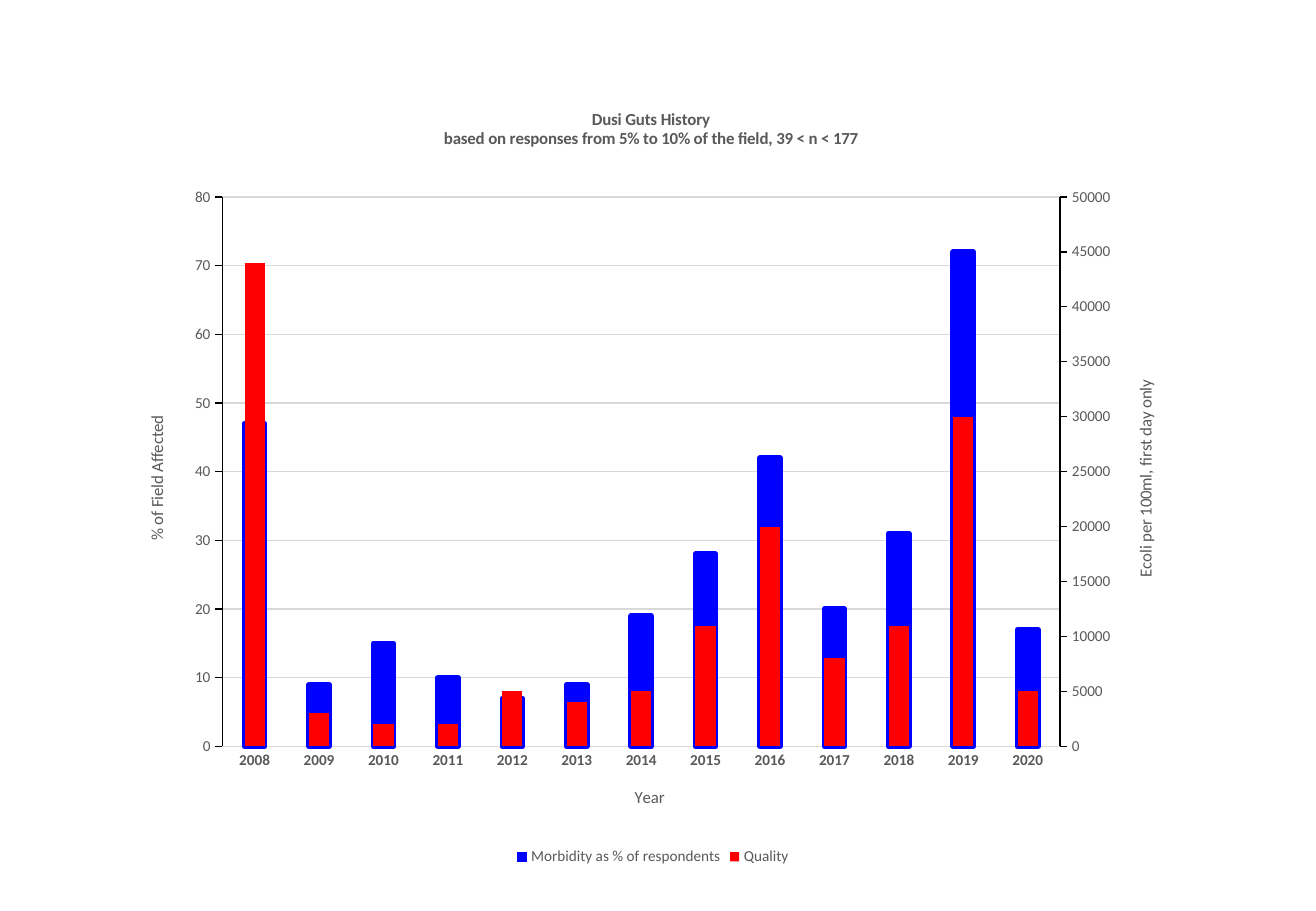
from copy import deepcopy

from lxml.etree import SubElement
from pptx import Presentation
from pptx.chart.axis import ValueAxis
from pptx.chart.data import CategoryChartData
from pptx.dml.color import RGBColor
from pptx.enum.chart import XL_CHART_TYPE as ChartType
from pptx.enum.chart import XL_LEGEND_POSITION as LegendPosition
from pptx.enum.chart import XL_TICK_MARK as TickMark
from pptx.oxml import parse_xml
from pptx.oxml.ns import nsdecls, qn
from pptx.util import Pt

MORBIDITY = [47, 9, 15, 10, 7, 9, 19, 28, 42, 20, 31, 72, 17]
QUALITY = [44000, 3000, 2000, 2000, 5000, 4000, 5000, 11000, 20000, 8000,
           11000, 30000, 5000]


def color(hex_text):
    return RGBColor.from_string(hex_text)


def format_font(font, size=9, fill="595959", bold=False, name="Calibri"):
    font.size, font.bold, font.name = Pt(size), bold, name
    font.color.rgb = color(fill)


def write_text(frame, text, **style):
    for index, line in enumerate(text.split("\n")):
        paragraph = frame.add_paragraph() if index else frame.paragraphs[0]
        run = paragraph.add_run()
        run.text = line
        format_font(run.font, **style)


def place(element, index, inner=False, **fractions):
    for old in element.findall(qn("c:layout")):
        element.remove(old)
    layout = parse_xml(f"<c:layout {nsdecls('c')}><c:manualLayout/></c:layout>")
    settings = {"layoutTarget": "inner"} if inner else {}
    settings.update(xMode="edge", yMode="edge", **fractions)
    for tag, value in settings.items():
        SubElement(layout[0], qn(f"c:{tag}")).set("val", str(value))
    element.insert(index, layout)


class HistorySlide:
    """Build a slide with a two-axis column chart in one style."""

    def __init__(self, width, height):
        self.deck = Presentation()
        self.deck.slide_width, self.deck.slide_height = Pt(width), Pt(height)
        self.slide = self.deck.slides.add_slide(self.deck.slide_layouts[6])

    def column_chart(self, years, series, left, top, width, height):
        data = CategoryChartData()
        data.categories = years
        for name, values in series.items():
            data.add_series(name, values)
        frame = self.slide.shapes.add_chart(
            ChartType.COLUMN_CLUSTERED, Pt(left), Pt(top), Pt(width), Pt(height), data)
        self.chart = frame.chart
        format_font(self.chart.font, size=10)

    def split_axes(self):
        left_axis = self.chart.value_axis
        left_bars = self.chart.plots[0]._element
        right_bars = deepcopy(left_bars)
        left_bars.remove(left_bars.findall(qn("c:ser"))[1])
        right_bars.remove(right_bars.findall(qn("c:ser"))[0])
        left_bars.addnext(right_bars)
        years = deepcopy(self.chart.category_axis._element)
        values = deepcopy(left_axis._element)
        ids = ["50010", "50020"]
        for reference, axis_id in zip(right_bars.findall(qn("c:axId")), ids):
            reference.set("val", axis_id)
        for axis, axis_id, cross_id in zip([years, values], ids, ids[::-1]):
            axis.find(qn("c:axId")).set("val", axis_id)
            axis.find(qn("c:crossAx")).set("val", cross_id)
        values.find(qn("c:axPos")).set("val", "r")
        values.find(qn("c:crosses")).set("val", "max")
        left_axis._element.addnext(values)
        values.addnext(years)
        ValueAxis(years).visible = False
        return left_axis, ValueAxis(values)

    def axis(self, axis, title, x, y, line="000000", tick=TickMark.OUTSIDE,
             bold=False, turned=True, maximum=None, step=None):
        axis.major_tick_mark, axis.minor_tick_mark = tick, TickMark.NONE
        axis.has_major_gridlines = False
        axis.format.line.color.rgb = color(line)
        axis.format.line.width = Pt(0.75)
        format_font(axis.tick_labels.font, bold=bold)
        if maximum:
            axis.minimum_scale, axis.maximum_scale = 0, maximum
            axis.major_unit = step
        frame = axis.axis_title.text_frame
        write_text(frame, title, size=10)
        if turned:
            body = frame._txBody.find(qn("a:bodyPr"))
            body.set("rot", "-5400000")
            body.set("vert", "horz")
        place(axis.axis_title._element, 1, x=x, y=y)

    def gridlines(self, axis, fill):
        axis.has_major_gridlines = True
        axis.major_gridlines.format.line.color.rgb = color(fill)
        axis.major_gridlines.format.line.width = Pt(0.75)

    def bars(self, plot, fill, outline=0):
        plot.gap_width, plot.overlap, plot.vary_by_categories = 219, -27, False
        bar_format = plot.series[0].format
        bar_format.fill.solid()
        bar_format.fill.fore_color.rgb = color(fill)
        if outline:
            bar_format.line.color.rgb = color(fill)
            bar_format.line.width = Pt(outline)
        else:
            bar_format.line.fill.background()

    def title(self, text, x, y):
        title = self.chart.chart_title
        write_text(title.text_frame, text, size=10, bold=True)
        place(title._element, 1, x=x, y=y)

    def legend(self):
        self.chart.has_legend = True
        self.chart.legend.position = LegendPosition.BOTTOM
        self.chart.legend.include_in_layout = False
        format_font(self.chart.legend.font)

    def save(self):
        self.deck.save("out.pptx")


def main():
    history = HistorySlide(780, 540)
    history.column_chart(
        [str(year) for year in range(2008, 2021)],
        {"Morbidity as % of respondents": MORBIDITY, "Quality": QUALITY},
        72, 48, 630, 468)
    chart = history.chart
    field_axis, ecoli_axis = history.split_axes()
    history.title("Dusi Guts History\n"
                  "based on responses from 5% to 10% of the field, 39 < n < 177",
                  0.3, 0.03)
    history.axis(chart.category_axis, "Year", 0.48, 0.89, line="D9D9D9",
                 tick=TickMark.NONE, bold=True, turned=False)
    history.axis(field_axis, "% of Field Affected", 0.02, 0.42,
                 maximum=80, step=10)
    history.axis(ecoli_axis, "Ecoli per 100ml, first day only", 0.95, 0.375,
                 maximum=50000, step=5000)
    history.gridlines(field_axis, "D9D9D9")
    morbidity, quality = chart.plots
    history.bars(morbidity, "0000FF", outline=3.25)
    history.bars(quality, "FF0000")
    plot_area = morbidity._element.getparent()
    place(plot_area, 0, inner=True, x=0.095, y=0.147, w=0.788, h=0.696)
    history.legend()
    history.save()


if __name__ == "__main__":
    main()
